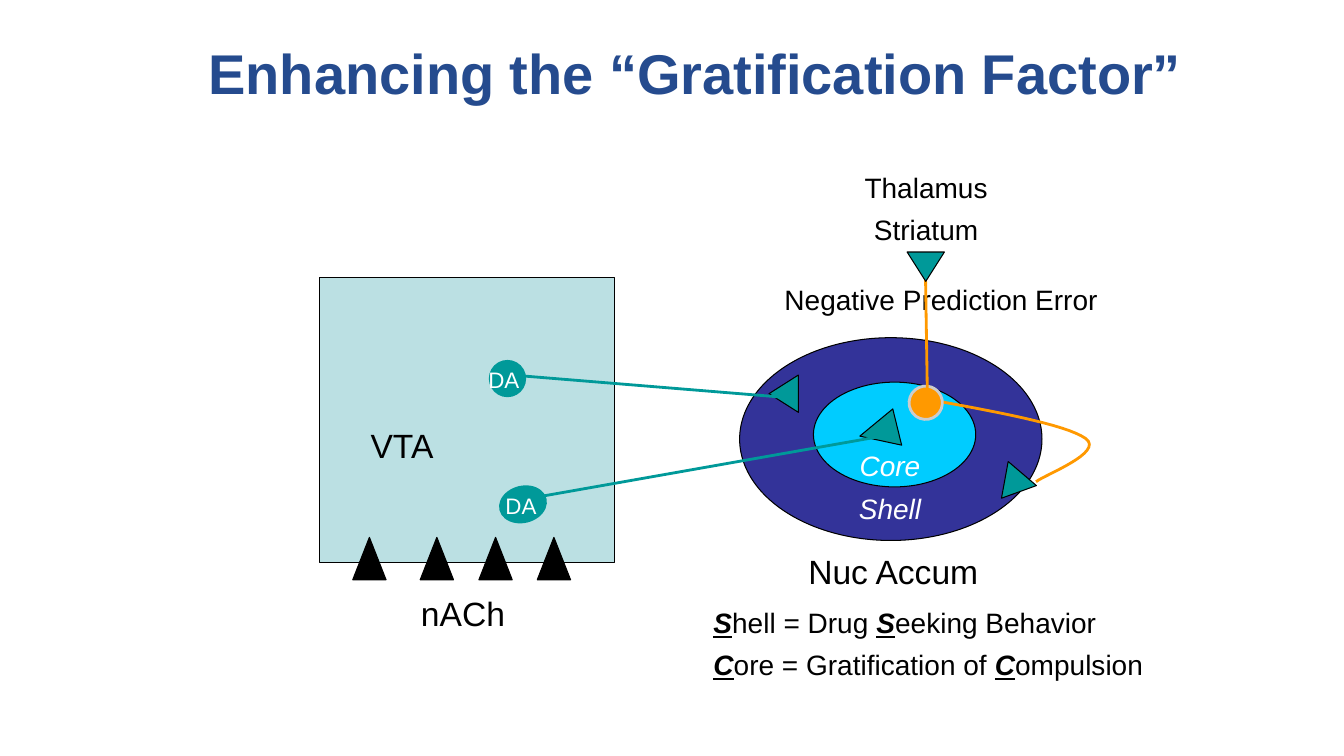
from lxml import etree
from pptx import Presentation
from pptx.dml.color import RGBColor
from pptx.enum.shapes import MSO_CONNECTOR, MSO_SHAPE as Preset
from pptx.enum.text import MSO_ANCHOR, MSO_AUTO_SIZE, PP_ALIGN as Align
from pptx.oxml.ns import qn
from pptx.util import Cm, Pt

COLORS = {
    "black": "000000", "white": "FFFFFF", "title": "254B8E",
    "vta": "BBE0E3", "shell": "333399", "core": "00CCFF",
    "dopamine": "009999", "inhibition": "FF9900", "rim": "CCCCCC",
}


def color(name):
    return RGBColor.from_string(COLORS[name])


def write_text(frame, *lines, size=20, ink="black", align=Align.LEFT,
               bold=False, italic=False, gap=6):
    """Write one paragraph per line; *starred* parts are bold, italic and underlined."""
    frame.word_wrap = True
    for index, line in enumerate(lines):
        paragraph = frame.paragraphs[0] if index == 0 else frame.add_paragraph()
        paragraph.alignment = align
        paragraph.space_before = Pt(gap if index else 0)
        for position, part in enumerate(line.split("*")):
            if not part:
                continue
            starred = position % 2 == 1
            run = paragraph.add_run()
            run.text = part
            font = run.font
            font.name = "Arial"
            font.size = Pt(size)
            font.color.rgb = color(ink)
            font.bold = bold or starred
            font.italic = italic or starred
            font.underline = starred


def bezier(start, control_1, control_2, end, steps=16):
    """Return points along a cubic curve, without its start."""
    points = []
    for step in range(1, steps + 1):
        t = step / steps
        weights = ((1 - t) ** 3, 3 * t * (1 - t) ** 2, 3 * t ** 2 * (1 - t), t ** 3)
        corners = (start, control_1, control_2, end)
        points.append(tuple(sum(w * corner[axis] for w, corner in zip(weights, corners))
                            for axis in (0, 1)))
    return points


class Diagram:
    """Draws on one slide, with lengths in centimetres."""

    def __init__(self, slide, thin=0.75, thick=2):
        self.slide = slide
        self.thin = thin
        self.thick = thick

    def title(self, text, left, top, width, height):
        shape = self.slide.shapes.title
        shape.left, shape.top, shape.width, shape.height = map(Cm, (left, top, width, height))
        shape.text_frame.vertical_anchor = MSO_ANCHOR.TOP
        write_text(shape.text_frame, text, size=40, ink="title", bold=True)

    def shape(self, preset, left, top, width, height, fill, line="black",
              weight=None, rotation=0):
        shape = self.slide.shapes.add_shape(preset, *map(Cm, (left, top, width, height)))
        shape.shadow.inherit = False
        shape.rotation = rotation
        shape.fill.solid()
        shape.fill.fore_color.rgb = color(fill)
        if line:
            shape.line.color.rgb = color(line)
            shape.line.width = Pt(weight or self.thin)
        else:
            shape.line.fill.background()

    def terminal(self, left, top, width, height, rotation):
        self.shape(Preset.ISOSCELES_TRIANGLE, left, top, width, height,
                   "dopamine", rotation=rotation)

    def axon(self, start, end, ink):
        connector = self.slide.shapes.add_connector(
            MSO_CONNECTOR.STRAIGHT, *map(Cm, start + end))
        connector.line.color.rgb = color(ink)
        connector.line.width = Pt(self.thick)
        etree.SubElement(connector.element.spPr, qn("a:effectLst"))

    def curve(self, start, segments, ink):
        """Draw an open path; each segment holds two control points and an end."""
        points = [start]
        for segment in segments:
            points += bezier(points[-1], *segment)
        builder = self.slide.shapes.build_freeform(*map(Cm, start))
        builder.add_line_segments([tuple(map(Cm, point)) for point in points[1:]],
                                  close=False)
        shape = builder.convert_to_shape()
        shape.shadow.inherit = False
        shape.fill.background()
        shape.line.color.rgb = color(ink)
        shape.line.width = Pt(self.thick)

    def label(self, left, top, width, height, *lines, **text_format):
        box = self.slide.shapes.add_textbox(*map(Cm, (left, top, width, height)))
        write_text(box.text_frame, *lines, **text_format)
        box.text_frame.auto_size = MSO_AUTO_SIZE.SHAPE_TO_FIT_TEXT


def main():
    presentation = Presentation()
    presentation.slide_width = Cm(33.87)
    presentation.slide_height = Cm(19.05)
    slide = presentation.slides.add_slide(presentation.slide_layouts[5])
    diagram = Diagram(slide)
    diagram.title("Enhancing the “Gratification Factor”", 5, 0.84, 25.68, 3.18)

    # Brain regions
    diagram.shape(Preset.RECTANGLE, 8.05, 6.99, 7.44, 7.19, "vta")
    diagram.shape(Preset.OVAL, 18.64, 8.51, 7.62, 5.11, "shell")
    diagram.shape(Preset.OVAL, 20.5, 9.63, 4.09, 2.64, "core")

    # Dopamine neurons and their projections
    diagram.shape(Preset.OVAL, 12.32, 9.07, 0.94, 0.94, "dopamine", line=None)
    diagram.terminal(19.28, 9.55, 0.94, 0.74, 270)
    diagram.axon((12.88, 9.45), (19.74, 10.01), "dopamine")
    diagram.shape(Preset.OVAL, 12.57, 12.24, 1.22, 0.94, "dopamine",
                  line=None, rotation=346.3)
    diagram.terminal(21.67, 10.39, 0.94, 0.97, 256.3)
    diagram.axon((13.28, 12.57), (22.17, 11), "dopamine")

    # Region and cell names
    diagram.label(9.09, 10.59, 2.54, 1.27, "VTA", size=24)
    diagram.label(20.12, 13.77, 5.08, 1.27, "Nuc Accum", size=24)
    for left, top in ((11.86, 12.27), (11.43, 9.09)):
        diagram.label(left, top, 2.54, 0.94, "DA", size=16, ink="white", align=Align.CENTER)
    for top, name in ((12.27, "Shell"), (11.18, "Core")):
        diagram.label(19.89, top, 5.08, 1.09, name, ink="white",
                      align=Align.CENTER, italic=True)

    # Acetylcholine receptors
    for left in (8.89, 10.59, 12.07, 13.54):
        diagram.shape(Preset.ISOSCELES_TRIANGLE, left, 13.54, 0.84, 1.07, "black")
    diagram.label(10.36, 14.81, 2.74, 1.27, "nACh", size=24)
    diagram.label(17.73, 15.14, 11.48, 2.18,
                  "*S*hell = Drug *S*eeking Behavior",
                  "*C*ore = Gratification of *C*ompulsion")

    # Inhibitory neuron
    diagram.curve((23.19, 10.03), [
        ((25.02, 10.36), (26.85, 10.69), (27.36, 11.05)),
        ((27.84, 11.4), (26.34, 11.96), (26.11, 12.14)),
    ], "inhibition")
    diagram.terminal(25.25, 11.76, 0.94, 0.81, 100.3)
    diagram.shape(Preset.OVAL, 22.91, 9.73, 0.84, 0.84, "inhibition",
                  line="rim", weight=2, rotation=5)

    # Input from above
    diagram.label(18.64, 6.99, 10.16, 1.12, "Negative Prediction Error", align=Align.CENTER)
    diagram.axon((23.37, 9.91), (23.32, 6.73), "inhibition")
    diagram.terminal(22.86, 6.35, 0.94, 0.74, 180)
    diagram.label(20.7, 4.17, 5.28, 2.18, "Thalamus", "Striatum", align=Align.CENTER)

    presentation.save("out.pptx")


if __name__ == "__main__":
    main()
